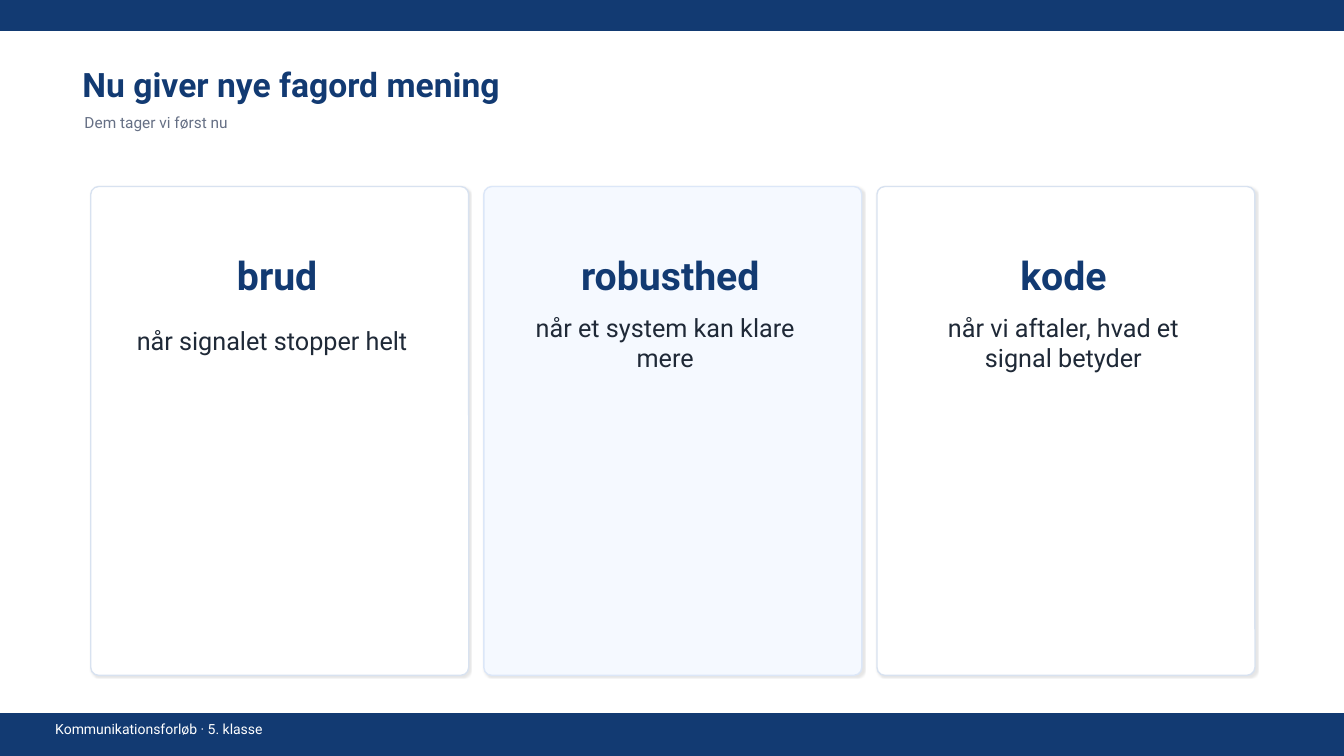
from dataclasses import dataclass

from lxml import etree
from pptx import Presentation
from pptx.dml.color import RGBColor
from pptx.enum.shapes import MSO_SHAPE
from pptx.enum.text import MSO_ANCHOR, PP_ALIGN
from pptx.oxml.ns import qn
from pptx.shapes.autoshape import Shape
from pptx.slide import Slide
from pptx.util import Pt

RECTANGLE = MSO_SHAPE.RECTANGLE
ROUNDED = MSO_SHAPE.ROUNDED_RECTANGLE
MIDDLE = MSO_ANCHOR.MIDDLE
LEFT = PP_ALIGN.LEFT
CENTER = PP_ALIGN.CENTER


@dataclass(frozen=True)
class Theme:
    font: str = "Roboto"
    navy: str = "123A72"
    white: str = "FFFFFF"
    grey: str = "667085"
    ink: str = "1F2937"
    tint: str = "F5F9FF"
    border: str = "D8E2F0"
    tint_border: str = "DCE7F8"
    shadow: str = "000000"
    footer_size: float = 10
    subtitle_size: float = 11
    meaning_size: float = 18
    title_size: float = 24
    term_size: float = 28


@dataclass(frozen=True)
class Frame:
    left: float
    top: float
    width: float
    height: float


@dataclass(frozen=True)
class Label:
    text: str
    frame: Frame
    size: float
    color: str
    bold: bool = False
    align: PP_ALIGN = LEFT


@dataclass(frozen=True)
class Card:
    term: str
    meaning: str
    fill: str
    border: str
    meaning_top: float
    meaning_width: float
    meaning_height: float


THEME = Theme()
PAGE_WIDTH, PAGE_HEIGHT = 960, 540
CARD_LEFT, CARD_TOP = 64.8, 133.2
CARD_WIDTH, CARD_HEIGHT, CARD_GAP = 270, 349.2, 10.8

BARS = [
    Frame(0, 0, PAGE_WIDTH, 21.6),
    Frame(0, 509.76, PAGE_WIDTH, 30.24),
]
LABELS = [
    Label("Kommunikationsforløb · 5. klasse", Frame(32.4, 515.52, 576, 10.8),
          THEME.footer_size, THEME.white),
    Label("Nu giver nye fagord mening", Frame(51.84, 44.64, 799.2, 30.24),
          THEME.title_size, THEME.navy, bold=True),
    Label("Dem tager vi først nu", Frame(53.28, 79.2, 777.6, 15.84),
          THEME.subtitle_size, THEME.grey),
]
CARDS = [
    Card("brud", "når signalet stopper helt",
         THEME.white, THEME.border, 226.8, 216, 32.4),
    Card("robusthed", "når et system kan klare mere",
         THEME.tint, THEME.tint_border, 226.8, 216, 36),
    Card("kode", "når vi aftaler, hvad et signal betyder",
         THEME.white, THEME.border, 219.6, 223.2, 50.4),
]


def add_panel(page: Slide, kind: MSO_SHAPE, frame: Frame, fill: str, border: str) -> Shape:
    panel = page.shapes.add_shape(
        kind, Pt(frame.left), Pt(frame.top), Pt(frame.width), Pt(frame.height))
    panel.shadow.inherit = False
    panel.fill.solid()
    panel.fill.fore_color.rgb = RGBColor.from_string(fill)
    panel.line.color.rgb = RGBColor.from_string(border)
    panel.line.width = Pt(1)
    return panel


def add_shadow(panel: Shape) -> None:
    effects = panel.element.spPr.find(qn("a:effectLst"))
    shadow = etree.SubElement(
        effects, qn("a:outerShdw"), blurRad=str(Pt(1)), dist=str(Pt(1.2)),
        dir=str(45 * 60000), algn="bl", rotWithShape="0")
    color = etree.SubElement(shadow, qn("a:srgbClr"), val=THEME.shadow)
    etree.SubElement(color, qn("a:alpha"), val="10000")


def add_label(page: Slide, label: Label) -> None:
    frame = label.frame
    box = page.shapes.add_textbox(
        Pt(frame.left), Pt(frame.top), Pt(frame.width), Pt(frame.height))
    box.text_frame.word_wrap = True
    box.text_frame.vertical_anchor = MIDDLE
    para = box.text_frame.paragraphs[0]
    para.alignment = label.align
    span = para.add_run()
    span.text = label.text
    span.font.name = THEME.font
    span.font.size = Pt(label.size)
    span.font.bold = label.bold
    span.font.color.rgb = RGBColor.from_string(label.color)


def add_card(page: Slide, card: Card, left: float) -> None:
    frame = Frame(left, CARD_TOP, CARD_WIDTH, CARD_HEIGHT)
    panel = add_panel(page, ROUNDED, frame, card.fill, card.border)
    panel.adjustments[0] = 0.021
    add_shadow(panel)
    add_label(page, Label(
        card.term, Frame(left + 25.2, 183.6, 216, 25.2),
        THEME.term_size, THEME.navy, bold=True, align=CENTER))
    add_label(page, Label(
        card.meaning,
        Frame(left + 21.6, card.meaning_top, card.meaning_width, card.meaning_height),
        THEME.meaning_size, THEME.ink, align=CENTER))


def main() -> None:
    deck = Presentation()
    deck.slide_width = Pt(PAGE_WIDTH)
    deck.slide_height = Pt(PAGE_HEIGHT)
    page = deck.slides.add_slide(deck.slide_layouts[6])
    for bar in BARS:
        add_panel(page, RECTANGLE, bar, THEME.navy, THEME.navy)
    for label in LABELS:
        add_label(page, label)
    for index, card in enumerate(CARDS):
        add_card(page, card, CARD_LEFT + index * (CARD_WIDTH + CARD_GAP))
    deck.save("out.pptx")


if __name__ == "__main__":
    main()
